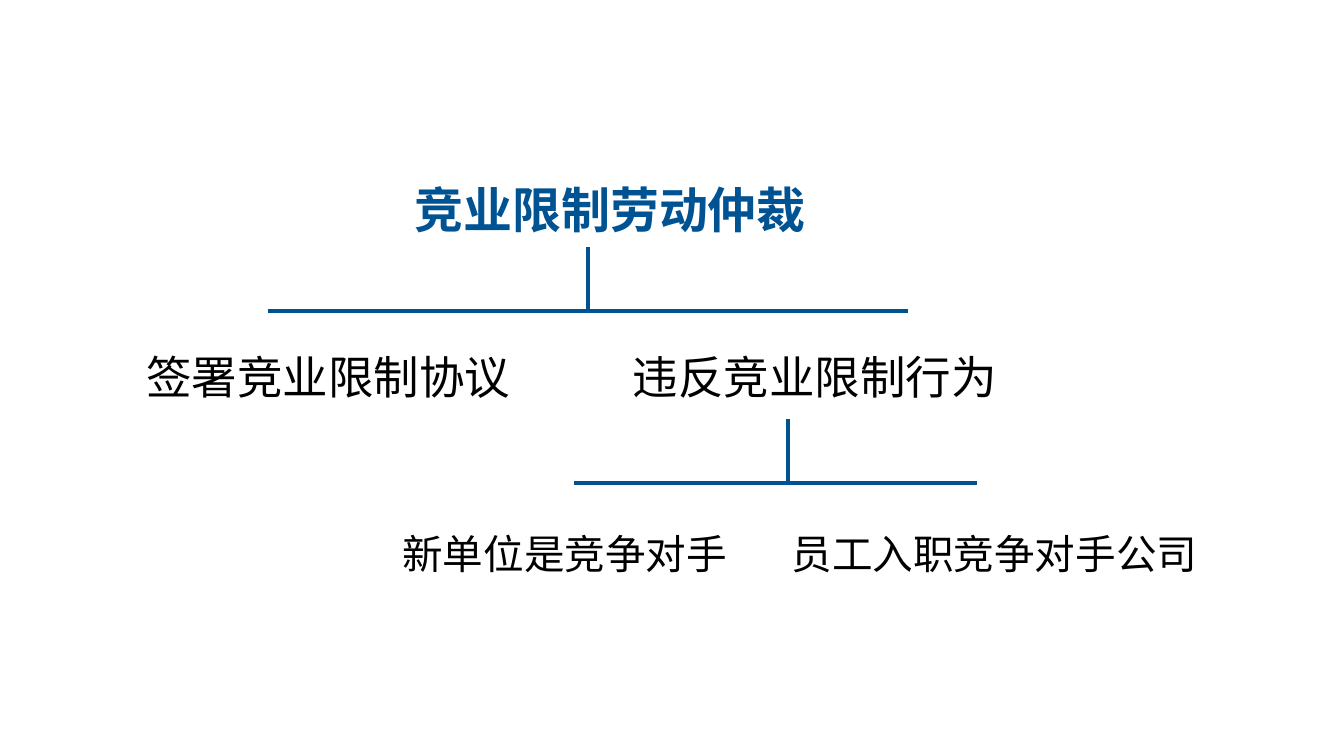
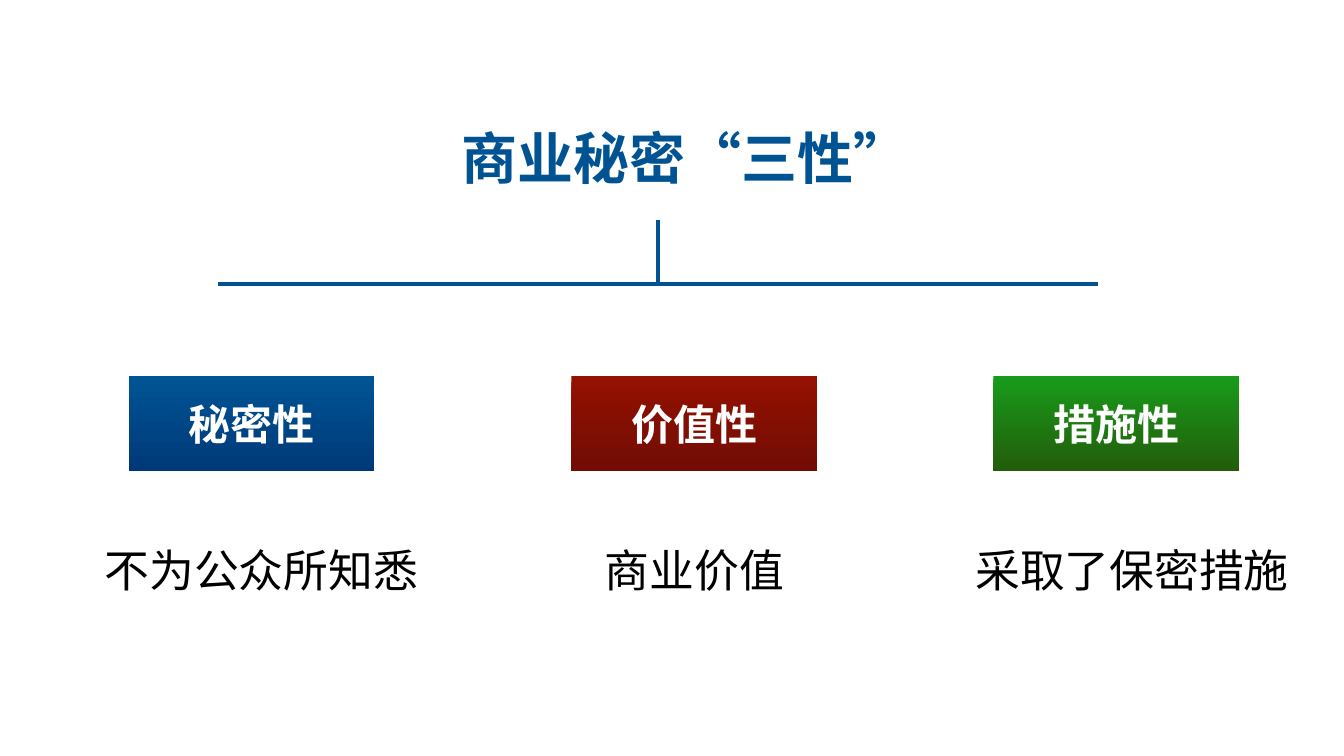
from lxml import etree
from pptx import Presentation
from pptx.dml.color import RGBColor
from pptx.enum.shapes import MSO_CONNECTOR, MSO_SHAPE
from pptx.enum.text import MSO_ANCHOR, MSO_AUTO_SIZE, PP_ALIGN
from pptx.oxml.ns import qn
from pptx.util import Cm, Pt

STRAIGHT = MSO_CONNECTOR.STRAIGHT
RECTANGLE = MSO_SHAPE.RECTANGLE
MIDDLE = MSO_ANCHOR.MIDDLE
NO_AUTOFIT = MSO_AUTO_SIZE.NONE
CENTER = PP_ALIGN.CENTER
JUSTIFY = PP_ALIGN.JUSTIFY

FONT = "Arial"
TITLE_BLUE = "005392"
LINE_BLUE = "005291"
BLACK = "000000"
WHITE = "FFFFFF"
TITLE_ONLY = 5
TEXT_INSET = 0.1
BOX_INSET = 0.2


def rgb(value):
    return RGBColor.from_string(value)


def write(sp, text, size, color, bold=False, align=CENTER, wrap=True, inset=TEXT_INSET):
    tf = sp.text_frame
    tf.auto_size = NO_AUTOFIT
    tf.word_wrap = wrap
    tf.vertical_anchor = MIDDLE
    tf.margin_left = tf.margin_right = tf.margin_top = tf.margin_bottom = Cm(inset)
    p = tf.paragraphs[0]
    p.alignment = align
    r = p.add_run()
    r.text = text
    r.font.name = FONT
    r.font.size = Pt(size)
    r.font.bold = bold
    r.font.color.rgb = rgb(color)


def add_slide(prs, title, left, top, width, height, size, wrap=True):
    s = prs.slides.add_slide(prs.slide_layouts[TITLE_ONLY])
    sp = s.shapes.title
    sp.left, sp.top, sp.width, sp.height = Cm(left), Cm(top), Cm(width), Cm(height)
    write(sp, title, size, TITLE_BLUE, True, JUSTIFY, wrap)
    return s


def add_label(shapes, text, left, top, width, height, size, wrap=True):
    sp = shapes.add_textbox(Cm(left), Cm(top), Cm(width), Cm(height))
    write(sp, text, size, BLACK, wrap=wrap)


def add_line(shapes, x1, y1, x2, y2):
    line = shapes.add_connector(STRAIGHT, Cm(x1), Cm(y1), Cm(x2), Cm(y2))
    line.line.color.rgb = rgb(LINE_BLUE)
    line.line.width = Pt(6)
    etree.SubElement(line._element.spPr, qn("a:effectLst"))


def add_branch(shapes, left, right, stem, y):
    add_line(shapes, left, y, right, y)
    add_line(shapes, stem, y + 0.08, stem, y - 3.22)


def add_gradient_box(shapes, text, left, top, width, height, colors):
    sp = shapes.add_shape(RECTANGLE, Cm(left), Cm(top), Cm(width), Cm(height))
    sp.shadow.inherit = False
    sp.line.fill.background()
    sp.fill.gradient()
    sp.fill.gradient_angle = 270
    for stop, color in zip(sp.fill.gradient_stops, colors):
        stop.color.rgb = rgb(color)
    write(sp, text, 60, WHITE, True, inset=BOX_INSET)


def build_arbitration(prs):
    s = add_slide(prs, "竞业限制劳动仲裁", 20.78, 8.69, 20.02, 3.68, 70, wrap=False)
    levels = [
        ((13.51, 45.77, 29.64, 15.67), 17.27, 3.43, 65,
         [("签署竞业限制协议", 7.26, 18.59), ("违反竞业限制行为", 31.78, 18.59)]),
        ((28.91, 49.23, 39.73, 24.33), 26.34, 3.07, 58,
         [("新单位是竞争对手", 20.14, 16.64), ("员工入职竞争对手公司", 39.75, 20.73)]),
    ]
    for branch, top, height, size, labels in levels:
        shapes = s.shapes.add_group_shape().shapes
        add_branch(shapes, *branch)
        for text, left, width in labels:
            add_label(shapes, text, left, top, width, height, size, wrap=False)


def build_trade_secret(prs):
    s = add_slide(prs, "商业秘密“三性”", 23.16, 5.84, 25.88, 4.17, 80)
    properties = [
        ("秘密性", 6.48, ("005493", "00397A"), "不为公众所知悉", 2.74, 20.85),
        ("价值性", 28.8, ("941100", "720C04"), "商业价值", 28.32, 13.36),
        ("措施性", 50.06, ("189B1A", "235D0B"), "采取了保密措施", 48.51, 17.07),
    ]
    for name, box_left, colors, meaning, left, width in properties:
        add_gradient_box(s.shapes, name, box_left, 18.97, 12.37, 4.75, colors)
        add_label(s.shapes, meaning, left, 27.15, width, 3.07, 64)
    add_branch(s.shapes, 11, 55.32, 33.17, 14.33)


def main():
    prs = Presentation()
    prs.slide_width, prs.slide_height = Cm(67.73), Cm(38.1)
    build_arbitration(prs)
    build_trade_secret(prs)
    prs.save("out.pptx")


if __name__ == "__main__":
    main()
